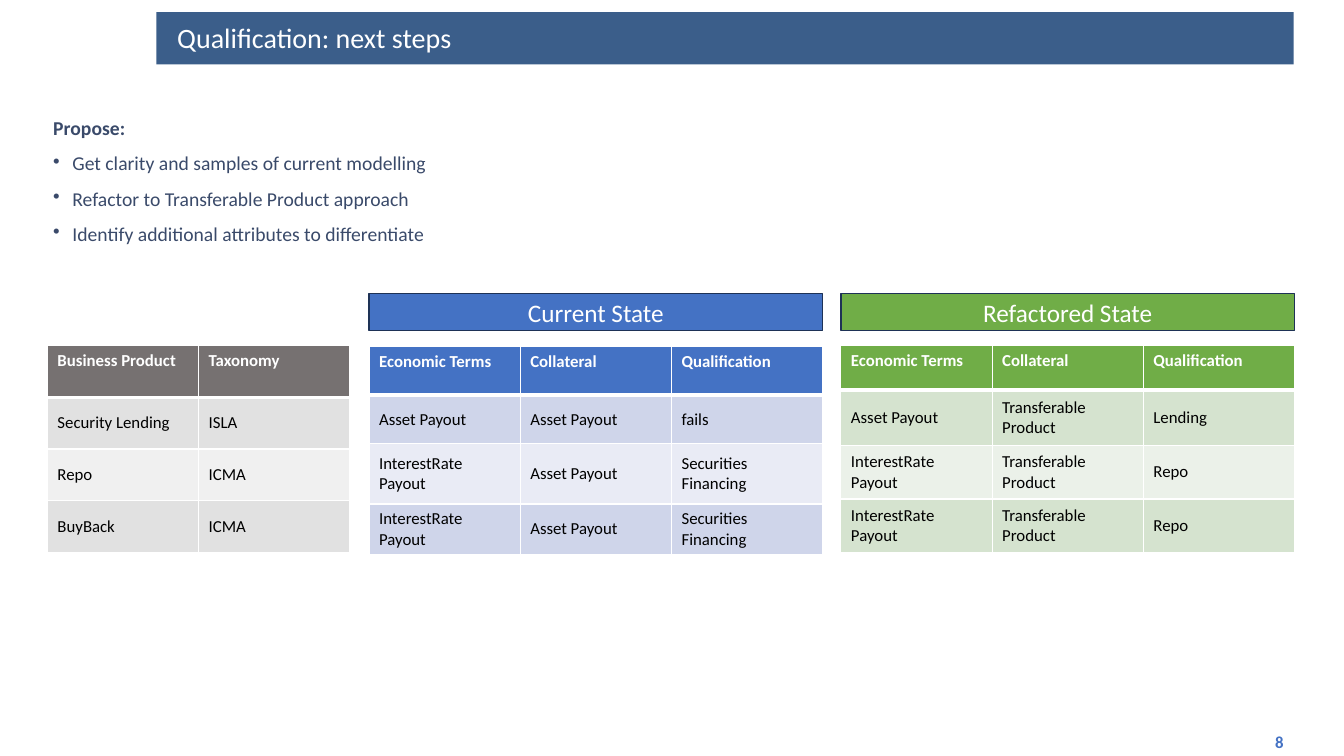
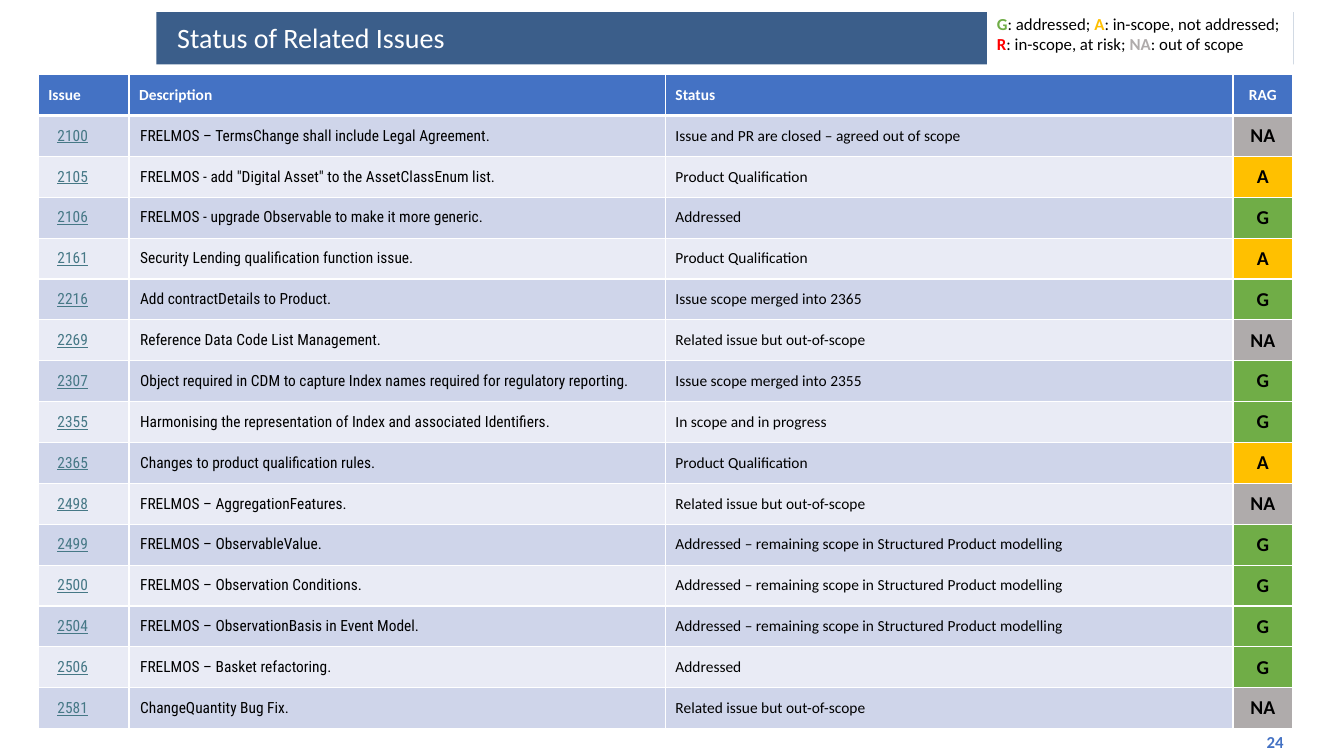
from dataclasses import dataclass
from typing import Optional, Sequence

from lxml import etree
from pptx import Presentation
from pptx import util as u
from pptx.dml.color import RGBColor
from pptx.enum import shapes, text
from pptx.oxml import ns

EMU_PER_PX = 9144
WHITE = RGBColor(0xFF, 0xFF, 0xFF)
BLACK = RGBColor(0, 0, 0)
BAND = RGBColor(0x3B, 0x5E, 0x8A)
BODY = RGBColor(0x3A, 0x4A, 0x6A)
OUTLINE = RGBColor(0x1E, 0x32, 0x56)
BLUE = RGBColor(0x44, 0x72, 0xC4)
BLUE_MID = RGBColor(0xCF, 0xD5, 0xEA)
BLUE_PALE = RGBColor(0xE9, 0xEB, 0xF5)
GREEN = RGBColor(0x70, 0xAD, 0x47)
GREEN_MID = RGBColor(0xD5, 0xE3, 0xCF)
GREEN_PALE = RGBColor(0xEB, 0xF1, 0xE9)
DARK_GRAY = RGBColor(0x76, 0x71, 0x71)
GRAY_MID = RGBColor(0xE1, 0xE1, 0xE1)
GRAY_PALE = RGBColor(0xF0, 0xF0, 0xF0)
GRAY = RGBColor(0xAF, 0xAB, 0xAB)
AMBER = RGBColor(0xFF, 0xC0, 0x00)
RED = RGBColor(0xFF, 0x00, 0x00)
LINK = RGBColor(0x46, 0x78, 0x86)
RATING_COLORS = {"G": GREEN, "A": AMBER, "R": RED, "NA": GRAY}

MAIN_FONT = "Calibri"
ISSUE_FONT = "Roboto Condensed"
CENTER = text.PP_ALIGN.CENTER
MIDDLE = text.MSO_ANCHOR.MIDDLE
TOP = text.MSO_ANCHOR.TOP


@dataclass(frozen=True)
class Box:
    left: int
    top: int
    width: int
    height: int

    def emu(self) -> tuple:
        return px(self.left), px(self.top), px(self.width), px(self.height)


@dataclass(frozen=True)
class Palette:
    header: RGBColor
    odd: RGBColor
    even: RGBColor


@dataclass(frozen=True)
class Column:
    title: str
    width: int
    font: str = MAIN_FONT
    color: RGBColor = BLACK
    underline: bool = False
    inset: int = 10
    rating: bool = False


@dataclass(frozen=True)
class Grid:
    left: int
    top: int
    height: int
    row_weights: Sequence[int]
    columns: Sequence[Column]
    rows: Sequence[Sequence[str]]
    palette: Palette
    size: int = 12
    header_anchor: text.MSO_ANCHOR = TOP
    banner: str = ""


BLUES = Palette(BLUE, BLUE_MID, BLUE_PALE)
GREENS = Palette(GREEN, GREEN_MID, GREEN_PALE)
GRAYS = Palette(DARK_GRAY, GRAY_MID, GRAY_PALE)
PRODUCT_COLUMNS = [Column(title, 150) for title in ("Business Product", "Taxonomy")]
STATE_COLUMNS = [Column(title, 150) for title in ("Economic Terms", "Collateral", "Qualification")]

STATE_GRIDS = [
    Grid(47, 343, 205, (1, 1, 1, 1), PRODUCT_COLUMNS, [
        ("Security Lending", "ISLA"),
        ("Repo", "ICMA"),
        ("BuyBack", "ICMA"),
    ], GRAYS),
    Grid(366, 344, 206, (48, 48, 60, 50), STATE_COLUMNS, [
        ("Asset Payout", "Asset Payout", "fails"),
        ("InterestRate Payout", "Asset Payout", "Securities\nFinancing"),
        ("InterestRate Payout", "Asset Payout", "Securities\nFinancing"),
    ], BLUES, banner="Current State"),
    Grid(834, 343, 205, (44, 55, 53, 53), STATE_COLUMNS, [
        ("Asset Payout", "Transferable Product", "Lending"),
        ("InterestRate Payout", "Transferable Product", "Repo"),
        ("InterestRate Payout", "Transferable Product", "Repo"),
    ], GREENS, banner="Refactored State"),
]

PROPOSALS = [
    "Get clarity and samples of current modelling",
    "Refactor to Transferable Product approach",
    "Identify additional attributes to differentiate",
]

ISSUE_COLUMNS = [
    Column("Issue", 90, ISSUE_FONT, LINK, underline=True, inset=19),
    Column("Description", 532, ISSUE_FONT, inset=11),
    Column("Status", 563),
    Column("RAG", 59, rating=True),
]
STRUCTURED = "Addressed – remaining scope in Structured Product modelling"
ISSUES = [
    ("2100", "FRELMOS – TermsChange shall include Legal Agreement.",
     "Issue and PR are closed – agreed out of scope", "NA"),
    ("2105", 'FRELMOS - add "Digital Asset" to the AssetClassEnum list.', "Product Qualification", "A"),
    ("2106", "FRELMOS - upgrade Observable to make it more generic.", "Addressed", "G"),
    ("2161", "Security Lending qualification function issue.", "Product Qualification", "A"),
    ("2216", "Add contractDetails to Product.", "Issue scope merged into 2365", "G"),
    ("2269", "Reference Data Code List Management.", "Related issue but out-of-scope", "NA"),
    ("2307", "Object required in CDM to capture Index names required for regulatory reporting.",
     "Issue scope merged into 2355", "G"),
    ("2355", "Harmonising the representation of Index and associated Identifiers.",
     "In scope and in progress", "G"),
    ("2365", "Changes to product qualification rules.", "Product Qualification", "A"),
    ("2498", "FRELMOS – AggregationFeatures.", "Related issue but out-of-scope", "NA"),
    ("2499", "FRELMOS – ObservableValue.", STRUCTURED, "G"),
    ("2500", "FRELMOS – Observation Conditions.", STRUCTURED, "G"),
    ("2504", "FRELMOS – ObservationBasis in Event Model.", STRUCTURED, "G"),
    ("2506", "FRELMOS – Basket refactoring.", "Addressed", "G"),
    ("2581", "ChangeQuantity Bug Fix.", "Related issue but out-of-scope", "NA"),
]
ISSUE_GRID = Grid(38, 74, 649, (1,) * (len(ISSUES) + 1), ISSUE_COLUMNS, ISSUES, BLUES,
                  size=11, header_anchor=MIDDLE)

LEGEND = [
    [("G", ": addressed; "), ("A", ": in-scope, not addressed;")],
    [("R", ": in-scope, at risk; "), ("NA", ": out of scope")],
]


def px(length: int) -> u.Emu:
    return u.Emu(length * EMU_PER_PX)


def write(frame, words: str, *, size: int, color: RGBColor, font: str = MAIN_FONT,
          bold: bool = False, underline: bool = False, align=text.PP_ALIGN.LEFT,
          line_spacing: Optional[float] = None, space_before: int = 0,
          bullet: bool = False, continues: bool = False) -> None:
    for line in words.split("\n"):
        paragraph = frame.paragraphs[-1]
        if paragraph.runs and not continues:
            paragraph = frame.add_paragraph()
        if bullet:
            properties = paragraph._p.get_or_add_pPr()
            properties.set("marL", str(px(19)))
            properties.set("indent", str(-px(19)))
            etree.SubElement(properties, ns.qn("a:buChar"), char="•")
        paragraph.alignment = align
        if line_spacing:
            paragraph.line_spacing = line_spacing
        if space_before:
            paragraph.space_before = u.Pt(space_before)
        run = paragraph.add_run()
        run.text = line
        run.font.name = font
        run.font.size = u.Pt(size)
        run.font.bold = bold
        run.font.underline = underline
        run.font.color.rgb = color


def add_text_box(slide, box: Box, anchor=TOP):
    frame = slide.shapes.add_textbox(*box.emu()).text_frame
    frame.word_wrap = True
    frame.vertical_anchor = anchor
    return frame


def add_rectangle(slide, box: Box, fill: RGBColor, line: Optional[RGBColor] = None):
    shape = slide.shapes.add_shape(shapes.MSO_SHAPE.RECTANGLE, *box.emu())
    shape.shadow.inherit = False
    shape.fill.solid()
    shape.fill.fore_color.rgb = fill
    if line is None:
        shape.line.fill.background()
    else:
        shape.line.color.rgb = line
        shape.line.width = u.Pt(1)
    return shape.text_frame


def style_cell(cell, fill: RGBColor, top: int, bottom: int, anchor) -> None:
    properties = cell._tc.get_or_add_tcPr()
    for side, points in (("L", 1), ("R", 1), ("T", top), ("B", bottom)):
        border = etree.SubElement(properties, ns.qn(f"a:ln{side}"), w=str(u.Pt(points)))
        solid = etree.SubElement(border, ns.qn("a:solidFill"))
        etree.SubElement(solid, ns.qn("a:srgbClr"), val=str(WHITE))
    cell.fill.solid()
    cell.fill.fore_color.rgb = fill
    cell.vertical_anchor = anchor


def add_grid(slide, grid: Grid) -> None:
    width = sum(column.width for column in grid.columns)
    box = Box(grid.left, grid.top, width, grid.height)
    table = slide.shapes.add_table(len(grid.row_weights), len(grid.columns), *box.emu()).table
    for row, weight in zip(table.rows, grid.row_weights):
        row.height = u.Emu(px(grid.height) * weight // sum(grid.row_weights))
    for index, column in enumerate(grid.columns):
        table.columns[index].width = px(column.width)
        align = CENTER if column.rating else text.PP_ALIGN.LEFT
        header = table.cell(0, index)
        style_cell(header, grid.palette.header, 1, 3, grid.header_anchor)
        write(header.text_frame, column.title, size=grid.size, color=WHITE, bold=True, align=align)
        for number, values in enumerate(grid.rows, 1):
            value = values[index]
            cell = table.cell(number, index)
            fill = grid.palette.odd if number % 2 else grid.palette.even
            if column.rating:
                fill = RATING_COLORS[value]
            style_cell(cell, fill, 3 if number == 1 else 1, 1, MIDDLE)
            cell.margin_left = px(column.inset)
            write(cell.text_frame, value, size=14 if column.rating else grid.size,
                  color=column.color, font=column.font, bold=column.rating,
                  underline=column.underline, align=align)
    if grid.banner:
        frame = add_rectangle(slide, Box(grid.left, 291, width, 37), grid.palette.header, OUTLINE)
        frame.vertical_anchor = MIDDLE
        write(frame, grid.banner, size=18, color=WHITE, align=CENTER)


def add_slide(presentation, title: str, number: int):
    slide = presentation.slides.add_slide(presentation.slide_layouts[6])
    add_rectangle(slide, Box(155, 12, 1128, 52), BAND)
    write(add_text_box(slide, Box(166, 18, 1083, 42), MIDDLE), title,
          size=20, color=WHITE, line_spacing=0.9)
    write(add_text_box(slide, Box(983, 721, 300, 29), MIDDLE), str(number),
          size=12, color=BLUE, bold=True, align=text.PP_ALIGN.RIGHT)
    return slide


def build_next_steps(presentation) -> None:
    slide = add_slide(presentation, "Qualification: next steps", 8)
    frame = add_text_box(slide, Box(43, 113, 1240, 160))
    write(frame, "Propose:", size=14, color=BODY, bold=True, line_spacing=0.9)
    for proposal in PROPOSALS:
        write(frame, proposal, size=14, color=BODY, line_spacing=0.9, space_before=10, bullet=True)
    for grid in STATE_GRIDS:
        add_grid(slide, grid)


def build_issue_status(presentation) -> None:
    slide = add_slide(presentation, "Status of Related Issues", 24)
    add_grid(slide, ISSUE_GRID)
    frame = add_rectangle(slide, Box(979, 9, 304, 60), WHITE)
    frame.word_wrap = False
    frame.vertical_anchor = TOP
    for line in LEGEND:
        for position, (rating, meaning) in enumerate(line):
            write(frame, rating, size=12, color=RATING_COLORS[rating], bold=True,
                  continues=position > 0)
            write(frame, meaning, size=12, color=BLACK, continues=True)


def main() -> None:
    presentation = Presentation()
    presentation.slide_width = px(1333)
    presentation.slide_height = px(750)
    build_next_steps(presentation)
    build_issue_status(presentation)
    presentation.save("out.pptx")


if __name__ == "__main__":
    main()
